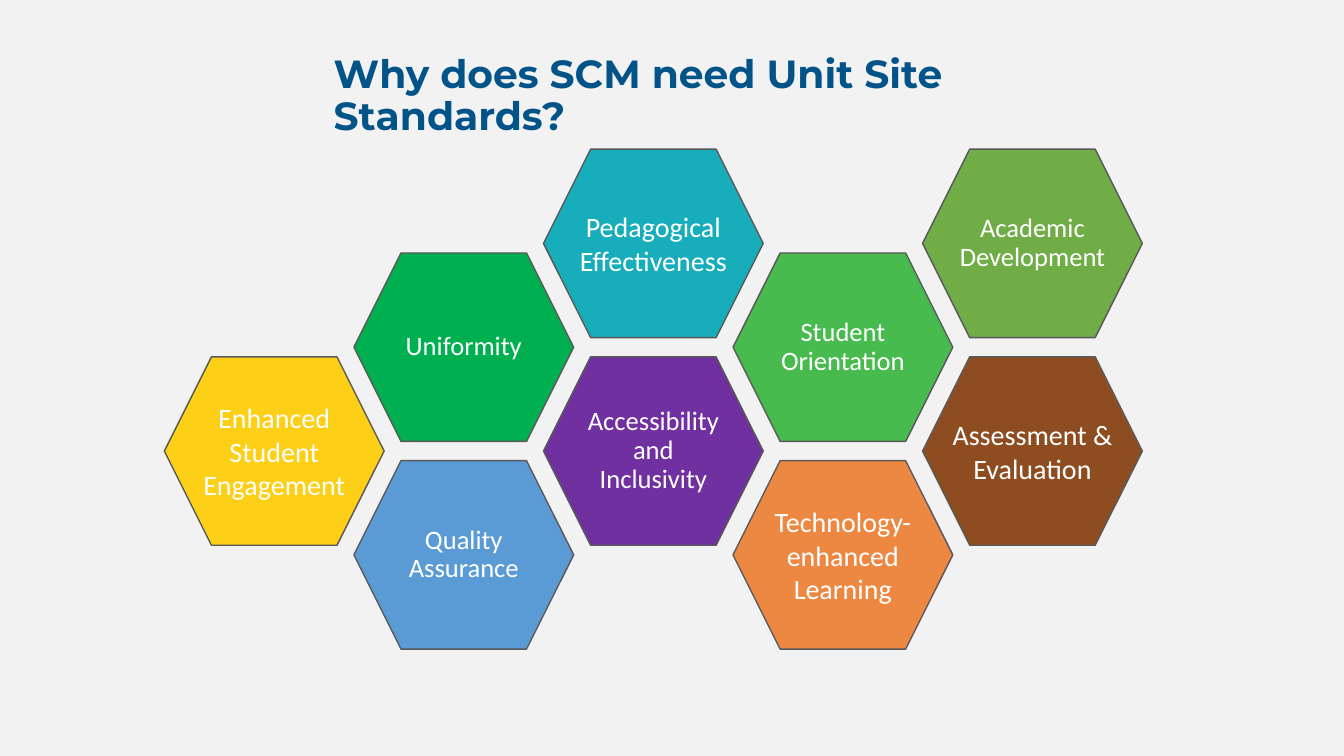
from lxml.etree import SubElement
from pptx import Presentation
from pptx.dml.color import RGBColor
from pptx.enum.shapes import MSO_SHAPE
from pptx.enum.text import MSO_ANCHOR, MSO_AUTO_SIZE, PP_ALIGN
from pptx.oxml.ns import qn
from pptx.util import Inches, Pt

HUES = {
    "back": "F2F2F2", "title": "025388", "edge": "595959", "text": "FFFFFF",
    "blue": "5B9BD5", "gold": "FFCC00", "plum": "7030A0", "rust": "ED7D31",
    "green": "00B050", "teal": "00A6B6", "lime": "48BB4F", "brown": "843C0B",
    "moss": "70AD47",
}
# Honeycomb: column and half-row steps
LEFT, TOP = 1.63, 1.48
COL, ROW = 1.88, 1.03
WIDE, HIGH = 2.18, 1.87

# column, half-row, hue, label, lines in a large label (0 for a compact one)
CELLS = [
    (1, 3, "blue", "Quality Assurance", 0),
    (0, 2, "gold", "Enhanced Student Engagement", 3),
    (2, 2, "plum", "Accessibility and Inclusivity", 0),
    (3, 3, "rust", "Technology-enhanced Learning", 3),
    (1, 1, "green", "Uniformity", 0),
    (2, 0, "teal", "Pedagogical Effectiveness", 2),
    (3, 1, "lime", "Student Orientation", 0),
    (4, 2, "brown", "Assessment & Evaluation", 2),
    (4, 0, "moss", "Academic Development", 0),
]


def color(name):
    return RGBColor.from_string(HUES[name])


def style(para, face, size, hue, bold=False):
    para.font.name = face
    para.font.size = Pt(size)
    para.font.bold = bold
    para.font.color.rgb = color(hue)


deck = Presentation()
deck.slide_width, deck.slide_height = Inches(13.33), Inches(7.5)
slide = deck.slides.add_slide(deck.slide_layouts[5])
slide.background.fill.solid()
slide.background.fill.fore_color.rgb = color("back")

title = slide.shapes.title
title.left, title.top = Inches(3.21), Inches(0.49)
title.width, title.height = Inches(8.57), Inches(0.6)
frame = title.text_frame
frame.text = "Why does SCM need Unit Site Standards?"
frame.auto_size = MSO_AUTO_SIZE.NONE
frame.vertical_anchor = MSO_ANCHOR.TOP
para = frame.paragraphs[0]
para.alignment = PP_ALIGN.LEFT
para.line_spacing = 0.9
style(para, "Montserrat", 28, "title", True)

for col, row, hue, label, lines in CELLS:
    x, y = LEFT + col * COL, TOP + row * ROW
    cell = slide.shapes.add_shape(
        MSO_SHAPE.HEXAGON, Inches(x), Inches(y), Inches(WIDE), Inches(HIGH))
    cell.adjustments[0] = 0.25
    cell.shadow.inherit = False
    cell.fill.solid()
    cell.fill.fore_color.rgb = color(hue)
    cell.line.color.rgb = color("edge")
    cell.line.width = Pt(1)
    if lines:
        tint = cell.fill._xPr.find(".//" + qn("a:srgbClr"))
        SubElement(tint, qn("a:alpha"), val="90000")

    wide, high = (2, 0.1 + lines / 3) if lines else (1.51, 1.29)
    box = slide.shapes.add_textbox(
        Inches(x + (WIDE - wide) / 2), Inches(y + (HIGH - high) / 2),
        Inches(wide), Inches(high))
    frame = box.text_frame
    frame.word_wrap = True
    frame.text = label
    para = frame.paragraphs[0]
    para.alignment = PP_ALIGN.CENTER
    if not lines:
        frame.vertical_anchor = MSO_ANCHOR.MIDDLE
        frame.margin_left = frame.margin_right = 0
        frame.margin_top = frame.margin_bottom = Inches(0.03)
        para.line_spacing = 0.9
    style(para, "Calibri", 20 if lines else 19, "text")

deck.save("out.pptx")
